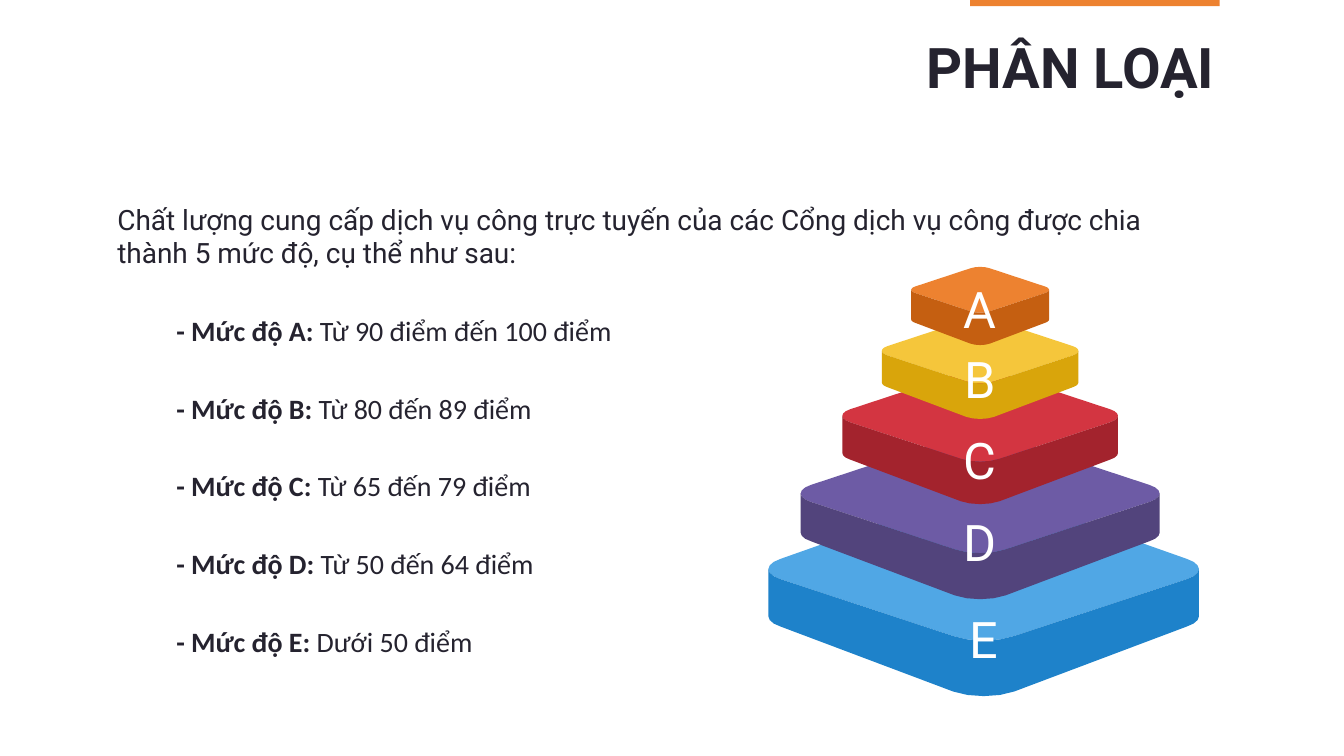
from pptx import Presentation
from pptx.dml.color import RGBColor
from pptx.enum.shapes import MSO_SHAPE
from pptx.enum.text import MSO_AUTO_SIZE, PP_ALIGN
from pptx.util import Inches, Pt

WIDTH, HEIGHT = 26.67, 15
INK, ORANGE, WHITE = "25232F", "ED8230", "FFFFFF"
INTRO = ("Chất lượng cung cấp dịch vụ công trực tuyến của các Cổng dịch vụ công "
         "được chia thành 5 mức độ, cụ thể như sau:")
LEVELS = [
    ("- Mức độ A:", " Từ 90 điểm đến 100 điểm"),
    ("- Mức độ B:", " Từ 80 đến 89 điểm"),
    ("- Mức độ C:", " Từ 65 đến 79 điểm"),
    ("- Mức độ D: ", "Từ 50 đến 64 điểm"),
    ("- Mức độ E:", " Dưới 50 điểm"),
]
TIER_KEYS = ("letter", "center", "middle", "shoulder", "depth", "back", "letter_top", "face", "front")
TIERS = [dict(zip(TIER_KEYS, row)) for row in (
    ("E", 4.37, 5.99, 4.03, 0.94, 0.3, 6.72, "50A7E5", "1E82CA"),
    ("D", 4.3, 4.49, 3.36, 0.78, 0.28, 4.8, "6D5BA5", "52447C"),
    ("C", 4.3, 2.95, 2.58, 0.74, 0.28, 3.16, "D33541", "A3232D"),
    ("B", 4.3, 1.66, 1.84, 0.63, 0.28, 1.56, "F5C63B", "D9A50B"),
    ("A", 4.3, 0.45, 1.29, 0.59, 0.28, 0.17, ORANGE, "C55F11"),
)]


def color(value):
    """Turn a hex string into a colour."""
    return RGBColor.from_string(value)


def paint(shape, fill):
    """Give a shape a flat fill without line or shadow."""
    shape.shadow.inherit = False
    shape.fill.solid()
    shape.fill.fore_color.rgb = color(fill)
    shape.line.fill.background()


def add_text_box(page, box, wrap=True):
    """Add an empty text box and return its frame."""
    frame = page.shapes.add_textbox(*map(Inches, box)).text_frame
    frame.word_wrap = wrap
    return frame


def add_span(para, text, ink=INK, **formats):
    """Add a run of text with the given font values."""
    span = para.add_run()
    span.text = text
    for name, value in formats.items():
        setattr(span.font, name, value)
    span.font.color.rgb = color(ink)


def add_heading(page, box):
    """Place the accent bar and the right-aligned title below it."""
    left, top, width, height = box
    bar_width = 4.95
    bar = page.shapes.add_shape(
        MSO_SHAPE.RECTANGLE, *map(Inches, (left + width - bar_width, 0, bar_width, 0.12)))
    paint(bar, ORANGE)
    para = add_text_box(page, box).paragraphs[0]
    para.alignment = PP_ALIGN.RIGHT
    add_span(para, "PHÂN LOẠI", name="Roboto", size=Pt(80), bold=True)


def add_levels(page, box):
    """Place the introduction and the indented list of levels."""
    frame = add_text_box(page, box)
    add_span(frame.paragraphs[0], INTRO, name="Roboto", size=Pt(40))
    for label, score in LEVELS:
        para = frame.add_paragraph()
        para.space_before = Pt(63)
        para._p.get_or_add_pPr().set("marL", str(Inches(1.17)))
        for text, bold in ((label, True), (score, False)):
            add_span(para, text, name="Calibri", size=Pt(40), bold=bold)


def curve(start, first, second, end, steps=4):
    """Sample a cubic curve as a list of points."""
    points = []
    for step in range(steps + 1):
        share = step / steps
        rest = 1 - share
        weights = rest ** 3, 3 * rest ** 2 * share, 3 * rest * share ** 2, share ** 3
        corners = start, first, second, end
        points.append(tuple(sum(weight * corner[axis] for weight, corner in zip(weights, corners))
                            for axis in (0, 1)))
    return points


def rounded_edge(shoulder, middle, slope, sign=1):
    """Return the edge from the right side round the tip to the left side."""
    side, tip = shoulder * 1.06, shoulder * 0.15
    drop, bulge = sign * shoulder * 0.05, sign * shoulder * 0.03
    tip_y = middle + drop + sign * shoulder * slope
    corner = curve((side, middle), (side, middle + drop * 0.35),
                   (shoulder * 1.04, middle + drop * 0.75), (shoulder, middle + drop), 3)
    nose = curve((tip, tip_y), (tip * 0.45, tip_y + bulge),
                 (-tip * 0.45, tip_y + bulge), (-tip, tip_y))
    return corner + nose + [(-x, y) for x, y in reversed(corner)]


def add_outline(page, points, origin, fill):
    """Draw a closed outline whose points are measured from the origin."""
    places = [(Inches(origin[0] + x), Inches(origin[1] + y)) for x, y in points]
    builder = page.shapes.build_freeform(*places[0])
    builder.add_line_segments(places[1:], close=True)
    paint(builder.convert_to_shape(), fill)


def add_tier(page, origin, tier):
    """Draw the top face and the front of one tier."""
    shoulder, middle = tier["shoulder"], tier["middle"]
    center = origin[0] + tier["center"], origin[1]
    near = rounded_edge(shoulder, middle, 0.28)
    far = rounded_edge(shoulder, middle, tier["back"], -1)
    base = rounded_edge(shoulder, middle + tier["depth"], 0.32)
    add_outline(page, near + far[-2:0:-1], center, tier["face"])
    add_outline(page, near + base[::-1], center, tier["front"])


def add_pyramid(page, origin):
    """Stack the tiers from the base up and letter them."""
    for tier in TIERS:
        add_tier(page, origin, tier)
    for tier in TIERS:
        width = 0.86
        box = (origin[0] + tier["center"] - width / 2, origin[1] + tier["letter_top"], width, 1.31)
        frame = add_text_box(page, box, wrap=False)
        frame.auto_size = MSO_AUTO_SIZE.SHAPE_TO_FIT_TEXT
        para = frame.paragraphs[0]
        para.alignment = PP_ALIGN.CENTER
        add_span(para, tier["letter"], WHITE, name="Roboto", size=Pt(72))


def main():
    """Build the slide and save it."""
    deck = Presentation()
    deck.slide_width, deck.slide_height = Inches(WIDTH), Inches(HEIGHT)
    page = deck.slides.add_slide(deck.slide_layouts[6])
    add_heading(page, (3.33, 0.6, 20.87, 2.44))
    add_levels(page, (2.23, 3.96, 20.87, 9.84))
    add_pyramid(page, (15.15, 5.3))
    deck.save("out.pptx")


if __name__ == "__main__":
    main()
